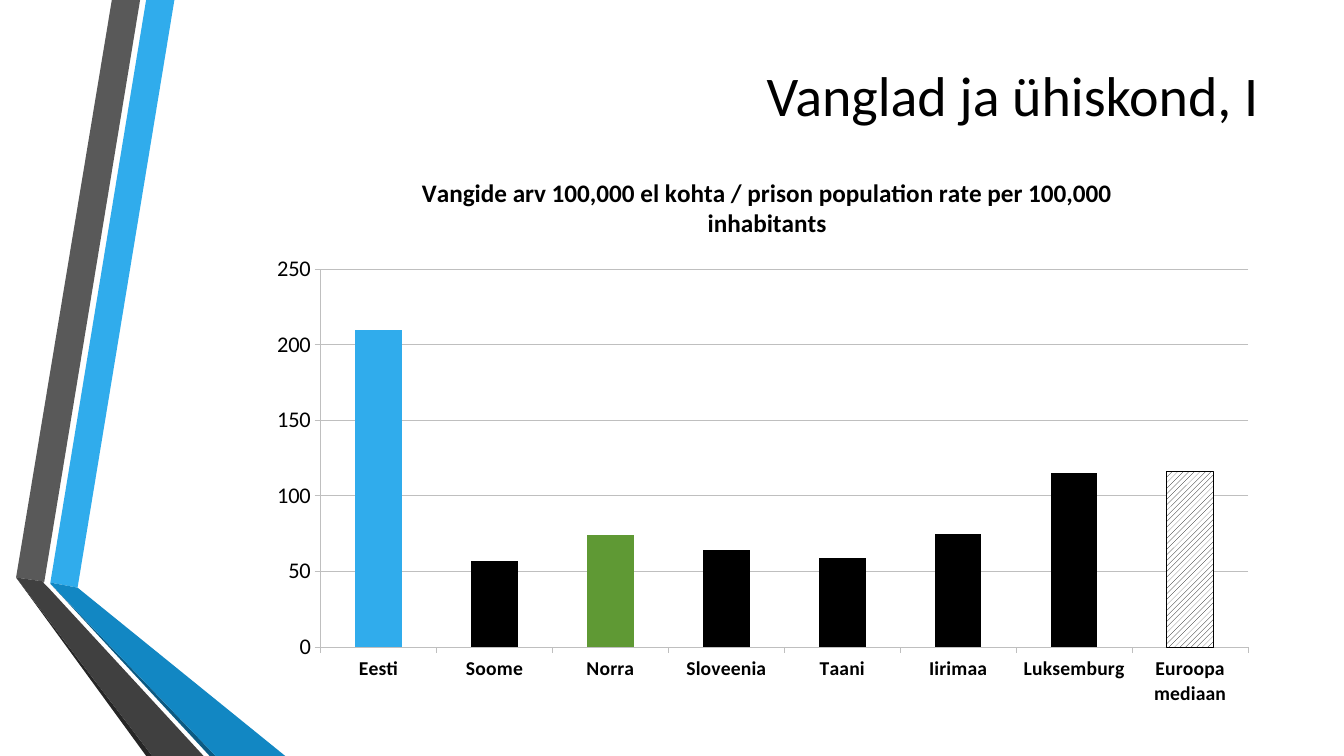
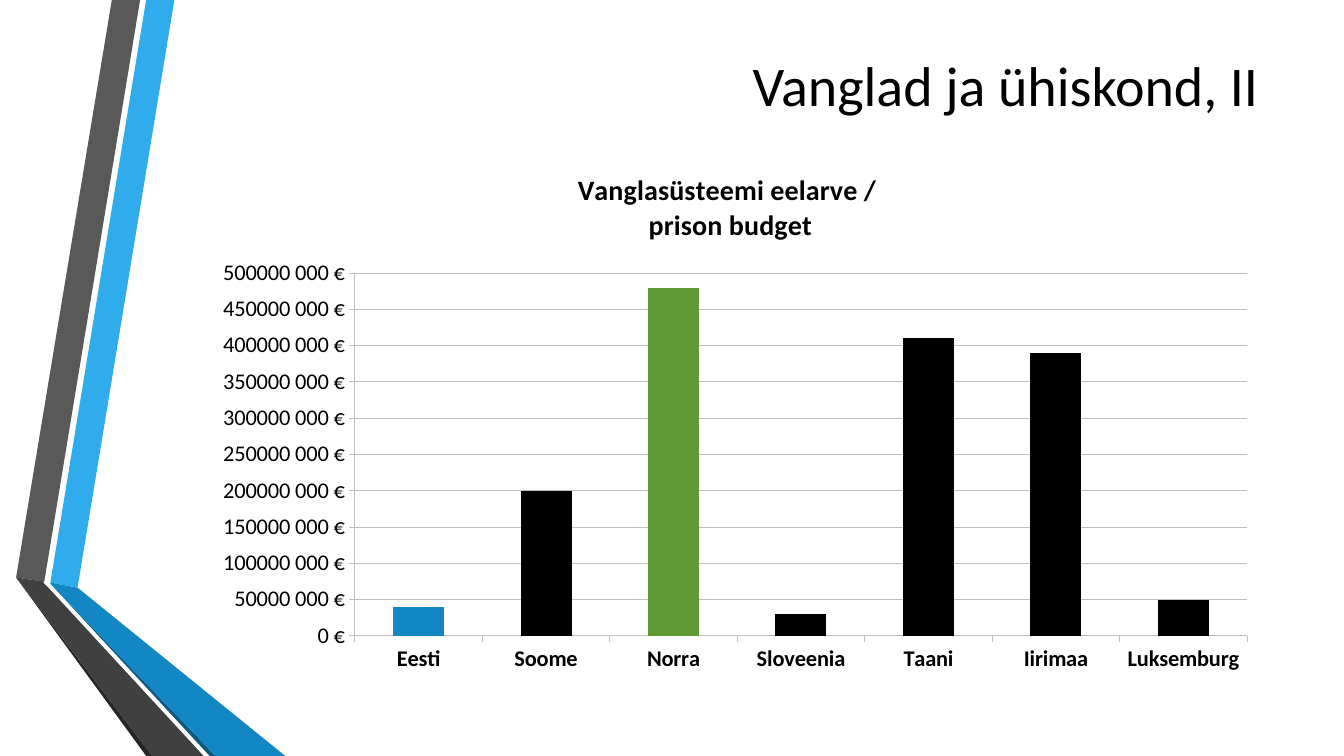
from dataclasses import dataclass

from pptx import Presentation
from pptx.chart.axis import CategoryAxis, ValueAxis
from pptx.chart.chart import Chart
from pptx.chart.data import CategoryChartData
from pptx.dml.color import RGBColor
from pptx.enum.chart import XL_CHART_TYPE as ChartType, XL_TICK_MARK as Tick
from pptx.enum.dml import MSO_PATTERN as Pattern
from pptx.enum.text import MSO_ANCHOR as Anchor, PP_ALIGN as Align
from pptx.oxml import parse_xml
from pptx.oxml.ns import nsdecls
from pptx.slide import Slide
from pptx.text.text import Font
from pptx.util import Inches, Pt

FONT = "Calibri"
BLACK, WHITE, GRID = "000000", "FFFFFF", "BFBFBF"
SKY, BLUE, GREEN = "30ACEC", "1287C3", "5F9934"
HATCHED = "hatched"
COUNTRIES = ("Eesti", "Soome", "Norra", "Sloveenia", "Taani", "Iirimaa", "Luksemburg")


@dataclass(frozen=True)
class Box:
    left: float
    top: float
    width: float
    height: float


@dataclass(frozen=True)
class Band:
    colour: str
    corners: tuple[tuple[float, float], ...]


@dataclass(frozen=True)
class Topic:
    heading: str
    heading_box: Box
    chart_box: Box
    chart_title: tuple[str, ...]
    title_size: int
    title_corner: tuple[float, float]
    plot_box: Box
    series_name: str
    values: dict[str, int]
    accents: dict[str, str]
    category_size: int
    maximum: int
    step: int
    number_format: str


BANDS = (
    Band(SKY, ((0.5, 5.78), (0.77, 5.83), (1.73, 0), (1.45, 0))),
    Band("595959", ((1.39, 0), (1.11, 0), (0.16, 5.73), (0.44, 5.77))),
    Band("262626", ((0.16, 5.73), (1.45, 7.5), (1.51, 7.5))),
    Band("0C5A82", ((0.5, 5.79), (2.08, 7.5), (2.14, 7.5))),
    Band(BLUE, ((0.5, 5.79), (2.14, 7.5), (2.83, 7.5), (0.77, 5.83), (0.5, 5.78))),
    Band("404040", ((2.02, 7.5), (0.48, 5.83), (0.43, 5.78), (0.44, 5.77),
                    (0.16, 5.73), (1.51, 7.5))),
)

RATE_TITLE = "Vangide arv 100,000 el kohta / prison population rate per 100,000 inhabitants"

TOPICS = (
    Topic(
        heading="Vanglad ja ühiskond, I",
        heading_box=Box(2.55, 0.37, 10.03, 1.13),
        chart_box=Box(2.55, 1.5, 10.03, 5.61),
        chart_title=(RATE_TITLE,),
        title_size=18,
        title_corner=(4.14, 1.69),
        plot_box=Box(3.18, 2.67, 9.2, 3.75),
        series_name=RATE_TITLE,
        values=dict(zip((*COUNTRIES, "Euroopa mediaan"),
                        (210, 57, 74, 64, 59, 75, 115, 116))),
        accents={"Eesti": SKY, "Norra": GREEN, "Euroopa mediaan": HATCHED},
        category_size=14,
        maximum=250,
        step=50,
        number_format="General",
    ),
    Topic(
        heading="Vanglad ja ühiskond, II",
        heading_box=Box(1.62, 0.41, 10.96, 0.84),
        chart_box=Box(2, 1.53, 10.58, 5.26),
        chart_title=("Vanglasüsteemi eelarve / ", "prison budget"),
        title_size=20,
        title_corner=(5.7, 1.67),
        plot_box=Box(3.52, 2.71, 8.85, 3.6),
        series_name="Series 1",
        values={country: millions * 1_000_000 for country, millions
                in zip(COUNTRIES, (40, 200, 480, 30, 410, 390, 50))},
        accents={"Eesti": BLUE, "Norra": GREEN},
        category_size=16,
        maximum=500_000_000,
        step=50_000_000,
        number_format='[=0]0" €";0" "000" €"',
    ),
)


def rgb(colour: str) -> RGBColor:
    return RGBColor.from_string(colour)


def inches(box: Box) -> tuple[Inches, ...]:
    return tuple(Inches(n) for n in (box.left, box.top, box.width, box.height))


def style_font(font: Font, size: int, bold: bool = False) -> None:
    font.name = FONT
    font.size = Pt(size)
    font.bold = bold
    font.color.rgb = rgb(BLACK)


def draw_band(slide: Slide, band: Band) -> None:
    start, *rest = [(Inches(x), Inches(y)) for x, y in band.corners]
    outline = slide.shapes.build_freeform(*start)
    outline.add_line_segments(rest, close=True)
    ribbon = outline.convert_to_shape()
    ribbon.shadow.inherit = False
    ribbon.fill.solid()
    ribbon.fill.fore_color.rgb = rgb(band.colour)
    ribbon.line.fill.background()


def draw_heading(slide: Slide, topic: Topic) -> None:
    frame = slide.shapes.add_textbox(*inches(topic.heading_box)).text_frame
    frame.word_wrap = True
    frame.vertical_anchor = Anchor.MIDDLE
    line = frame.paragraphs[0]
    line.alignment = Align.RIGHT
    run = line.add_run()
    run.text = topic.heading
    style_font(run.font, 40)


def manual_layout(target: str, **fractions: float):
    modes = "".join(f'<c:{axis}Mode val="edge"/>' for axis in "xy")
    sizes = "".join(f'<c:{key} val="{value}"/>' for key, value in fractions.items())
    return parse_xml(f"<c:layout {nsdecls('c')}><c:manualLayout>{target}{modes}{sizes}"
                     "</c:manualLayout></c:layout>")


def place_parts(chart: Chart, topic: Topic) -> None:
    outer, plot = topic.chart_box, topic.plot_box

    def corner(left: float, top: float) -> dict[str, float]:
        return {"x": (left - outer.left) / outer.width,
                "y": (top - outer.top) / outer.height}

    for old in chart.element.xpath("c:chart/c:title/c:layout | c:chart/c:plotArea/c:layout"):
        old.getparent().remove(old)
    chart.element.xpath("c:chart/c:title/c:tx")[0].addnext(
        manual_layout("", **corner(*topic.title_corner)))
    chart.element.xpath("c:chart/c:plotArea")[0].insert(0, manual_layout(
        '<c:layoutTarget val="inner"/>', **corner(plot.left, plot.top),
        w=plot.width / outer.width, h=plot.height / outer.height))


def write_chart_title(chart: Chart, topic: Topic) -> None:
    chart.has_title = True
    frame = chart.chart_title.text_frame
    for index, text in enumerate(topic.chart_title):
        line = frame.add_paragraph() if index else frame.paragraphs[0]
        line.alignment = Align.CENTER
        run = line.add_run()
        run.text = text
        style_font(run.font, topic.title_size, bold=True)
    chart.chart_title.include_in_layout = False


def style_axis(axis: CategoryAxis | ValueAxis, size: int, bold: bool) -> None:
    style_font(axis.tick_labels.font, size, bold)
    axis.major_tick_mark = Tick.OUTSIDE
    axis.minor_tick_mark = Tick.NONE
    axis.format.line.color.rgb = rgb(GRID)
    axis.format.line.width = Pt(0.75)


def colour_bars(chart: Chart, topic: Topic) -> None:
    series = chart.plots[0].series[0]
    series.invert_if_negative = False
    series.format.fill.solid()
    series.format.fill.fore_color.rgb = rgb(SKY)
    for index, category in enumerate(topic.values):
        accent = topic.accents.get(category, BLACK)
        bar = series.points[index].format
        if accent == HATCHED:
            bar.fill.patterned()
            bar.fill.pattern = Pattern.WIDE_UPWARD_DIAGONAL
            bar.fill.fore_color.rgb = rgb(BLACK)
            bar.fill.back_color.rgb = rgb(WHITE)
            bar.line.color.rgb = rgb(BLACK)
            bar.line.width = Pt(0.75)
        else:
            bar.fill.solid()
            bar.fill.fore_color.rgb = rgb(accent)


def draw_chart(slide: Slide, topic: Topic) -> None:
    data = CategoryChartData()
    data.categories = list(topic.values)
    data.add_series(topic.series_name, list(topic.values.values()))
    chart = slide.shapes.add_chart(
        ChartType.COLUMN_STACKED, *inches(topic.chart_box), data).chart
    style_font(chart.font, 10)
    chart.has_legend = False
    plot = chart.plots[0]
    plot.gap_width = 150
    plot.overlap = 100
    plot.vary_by_categories = False
    write_chart_title(chart, topic)
    colour_bars(chart, topic)
    style_axis(chart.category_axis, topic.category_size, bold=True)
    amounts = chart.value_axis
    style_axis(amounts, 16, bold=False)
    amounts.minimum_scale = 0
    amounts.maximum_scale = topic.maximum
    amounts.major_unit = topic.step
    amounts.has_major_gridlines = True
    amounts.major_gridlines.format.line.color.rgb = rgb(GRID)
    amounts.major_gridlines.format.line.width = Pt(0.75)
    amounts.tick_labels.number_format = topic.number_format
    amounts.tick_labels.number_format_is_linked = False
    place_parts(chart, topic)


def main() -> None:
    deck = Presentation()
    deck.slide_width, deck.slide_height = Inches(13.33), Inches(7.5)
    for topic in TOPICS:
        slide = deck.slides.add_slide(deck.slide_layouts[6])
        for band in BANDS:
            draw_band(slide, band)
        draw_heading(slide, topic)
        draw_chart(slide, topic)
    deck.save("out.pptx")


if __name__ == "__main__":
    main()
